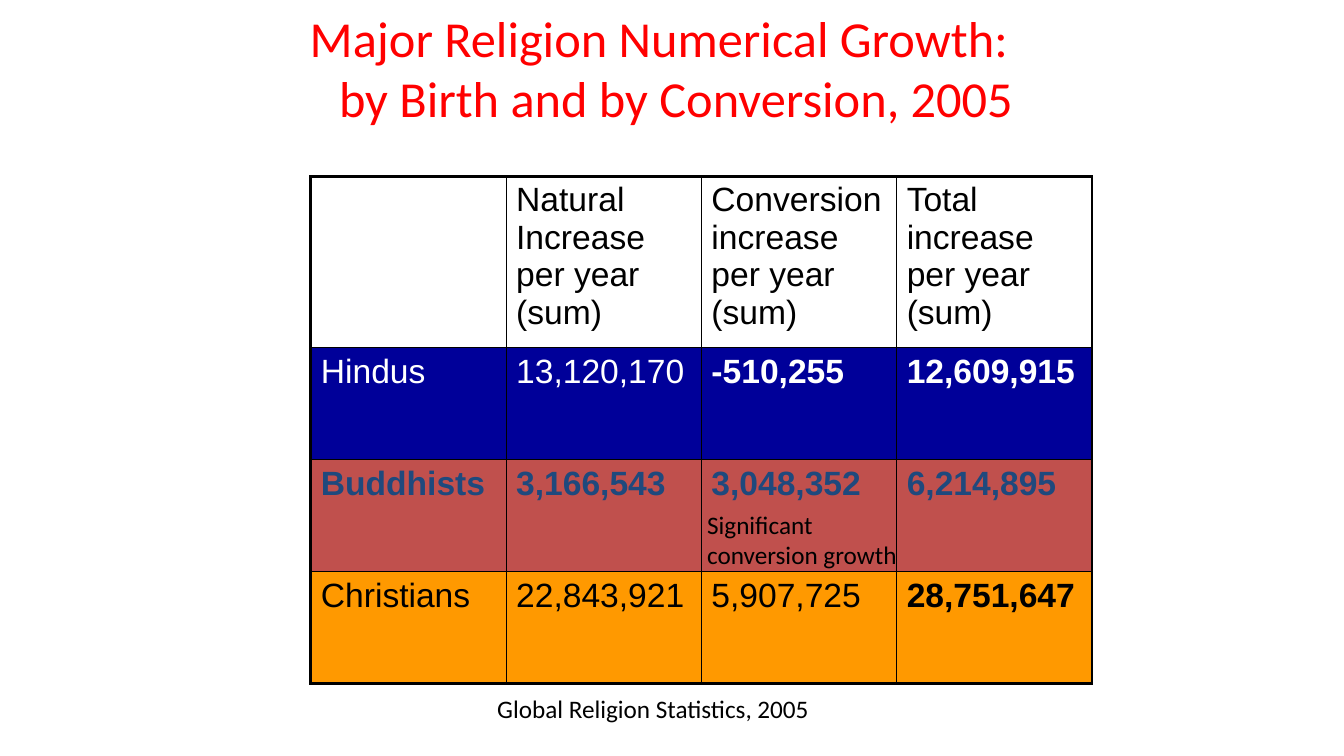
"""Build the slide on religious growth by birth and by conversion."""
from dataclasses import dataclass

from lxml.etree import SubElement
from pptx import Presentation
from pptx.dml.color import RGBColor as Color
from pptx.enum.text import MSO_ANCHOR as Anchor, MSO_AUTO_SIZE as AutoSize, PP_ALIGN as Align
from pptx.oxml.ns import qn
from pptx.shapes.autoshape import Shape
from pptx.slide import Slide
from pptx.table import _Cell as Cell
from pptx.util import Inches, Pt

UNIT = Inches(1) / 12


@dataclass(frozen=True)
class Theme:
    """Colours, typefaces and type sizes."""
    black: str = "000000"
    white: str = "FFFFFF"
    red: str = "FF0000"
    navy: str = "000099"
    brick: str = "C0504D"
    slate: str = "1F497D"
    orange: str = "FF9900"
    heading: str = "Calibri"
    body: str = "Arial"
    title_size: int = 36
    table_size: int = 24
    note_size: int = 18
    outer_line: float = 2.25
    inner_line: float = 1


THEME = Theme()


@dataclass(frozen=True)
class Area:
    """Place on a grid of 160 columns by 90 rows."""
    column: float
    row: float
    columns: float
    rows: float

    def lengths(self) -> tuple[int, ...]:
        """Give left, top, width and height."""
        return tuple(grid(value) for value in (self.column, self.row, self.columns, self.rows))


@dataclass(frozen=True)
class TableRow:
    """One table row with its look."""
    texts: tuple[str, ...]
    height: float
    colour: str
    fill: str | None = None
    bold: tuple[bool, ...] = (False,) * 4


@dataclass(frozen=True)
class Note:
    """A small line of text."""
    text: str
    area: Area


BODY_ROW = 40 / 3
TABLE_AREA = Area(37, 21, 93, 60.4)
TABLE_ROWS = (
    TableRow(("", "Natural Increase per year (sum)", "Conversion increase per year (sum)",
              "Total increase per year (sum)"), 20.4, THEME.black),
    TableRow(("Hindus", "13,120,170", "-510,255", "12,609,915"), BODY_ROW,
             THEME.white, THEME.navy, (False, False, True, True)),
    TableRow(("Buddhists", "3,166,543", "3,048,352", "6,214,895"), BODY_ROW,
             THEME.slate, THEME.brick, (True,) * 4),
    TableRow(("Christians", "22,843,921", "5,907,725", "28,751,647"), BODY_ROW,
             THEME.black, THEME.orange, (False, False, False, True)),
)
NOTES = (
    Note("Global Religion Statistics, 2005", Area(58, 82, 46, 4.8)),
    Note("Significant conversion growth", Area(83, 60, 26, 8.5)),
)


def grid(units: float) -> int:
    """Turn grid units into a length."""
    return round(units * UNIT)


def style(paragraph, name: str, size: int, colour: str, bold: bool = False) -> None:
    """Set the font of a paragraph."""
    font = paragraph.font
    font.name, font.size, font.bold = name, Pt(size), bold
    font.color.rgb = Color.from_string(colour)


def place(box: Shape, area: Area) -> None:
    """Move a shape to an area."""
    box.left, box.top, box.width, box.height = area.lengths()


def draw_title(page: Slide) -> None:
    """Fill the title, with its first line set a little to the left."""
    box = page.shapes.title
    place(box, Area(31, 2, 99, 12))
    frame = box.text_frame
    frame.text = "Major Religion Numerical Growth:\vby Birth and by Conversion, 2005"
    frame.word_wrap, frame.auto_size = True, AutoSize.NONE
    frame.vertical_anchor = Anchor.MIDDLE
    hanging = Inches(0.34)
    frame.margin_left, frame.margin_right = Inches(0.1), Inches(0.1) + hanging
    paragraph = frame.paragraphs[0]
    paragraph.alignment = Align.CENTER
    properties = paragraph._p.get_or_add_pPr()
    properties.set("marL", str(hanging))
    properties.set("indent", str(-hanging))
    style(paragraph, THEME.heading, THEME.title_size, THEME.red)


def draw_borders(cell: Cell, outer: dict[str, bool]) -> None:
    """Line the four sides of a cell, thicker on the table's edge."""
    properties = cell._tc.get_or_add_tcPr()
    for side, is_outer in outer.items():
        width = THEME.outer_line if is_outer else THEME.inner_line
        line = SubElement(properties, qn(f"a:ln{side}"), w=str(Pt(width)))
        SubElement(SubElement(line, qn("a:solidFill")), qn("a:srgbClr"), val=THEME.black)


def draw_cell(cell: Cell, row: TableRow, index: int) -> None:
    """Write and fill one cell."""
    cell.text = row.texts[index]
    style(cell.text_frame.paragraphs[0], THEME.body, THEME.table_size, row.colour, row.bold[index])
    if row.fill:
        cell.fill.solid()
        cell.fill.fore_color.rgb = Color.from_string(row.fill)
    else:
        cell.fill.background()


def draw_table(page: Slide) -> None:
    """Draw the growth table."""
    last_row, last_column = len(TABLE_ROWS) - 1, len(TABLE_ROWS[0].texts) - 1
    table = page.shapes.add_table(last_row + 1, last_column + 1, *TABLE_AREA.lengths()).table
    table.first_row = table.horz_banding = False
    for column in table.columns:
        column.width = grid(TABLE_AREA.columns / (last_column + 1))
    for down, row in enumerate(TABLE_ROWS):
        table.rows[down].height = grid(row.height)
        for across in range(last_column + 1):
            cell = table.cell(down, across)
            draw_borders(cell, {"L": across == 0, "R": across == last_column,
                                "T": down == 0, "B": down == last_row})
            draw_cell(cell, row, across)


def draw_note(page: Slide, note: Note) -> None:
    """Draw a small text box."""
    frame = page.shapes.add_textbox(*note.area.lengths()).text_frame
    frame.text = note.text
    frame.word_wrap, frame.auto_size = True, AutoSize.SHAPE_TO_FIT_TEXT
    style(frame.paragraphs[0], THEME.heading, THEME.note_size, THEME.black)


def main() -> None:
    """Build and save the deck."""
    deck = Presentation()
    deck.slide_width, deck.slide_height = grid(160), grid(90)
    page = deck.slides.add_slide(deck.slide_layouts[5])
    draw_title(page)
    draw_table(page)
    for note in NOTES:
        draw_note(page, note)
    deck.save("out.pptx")


if __name__ == "__main__":
    main()
